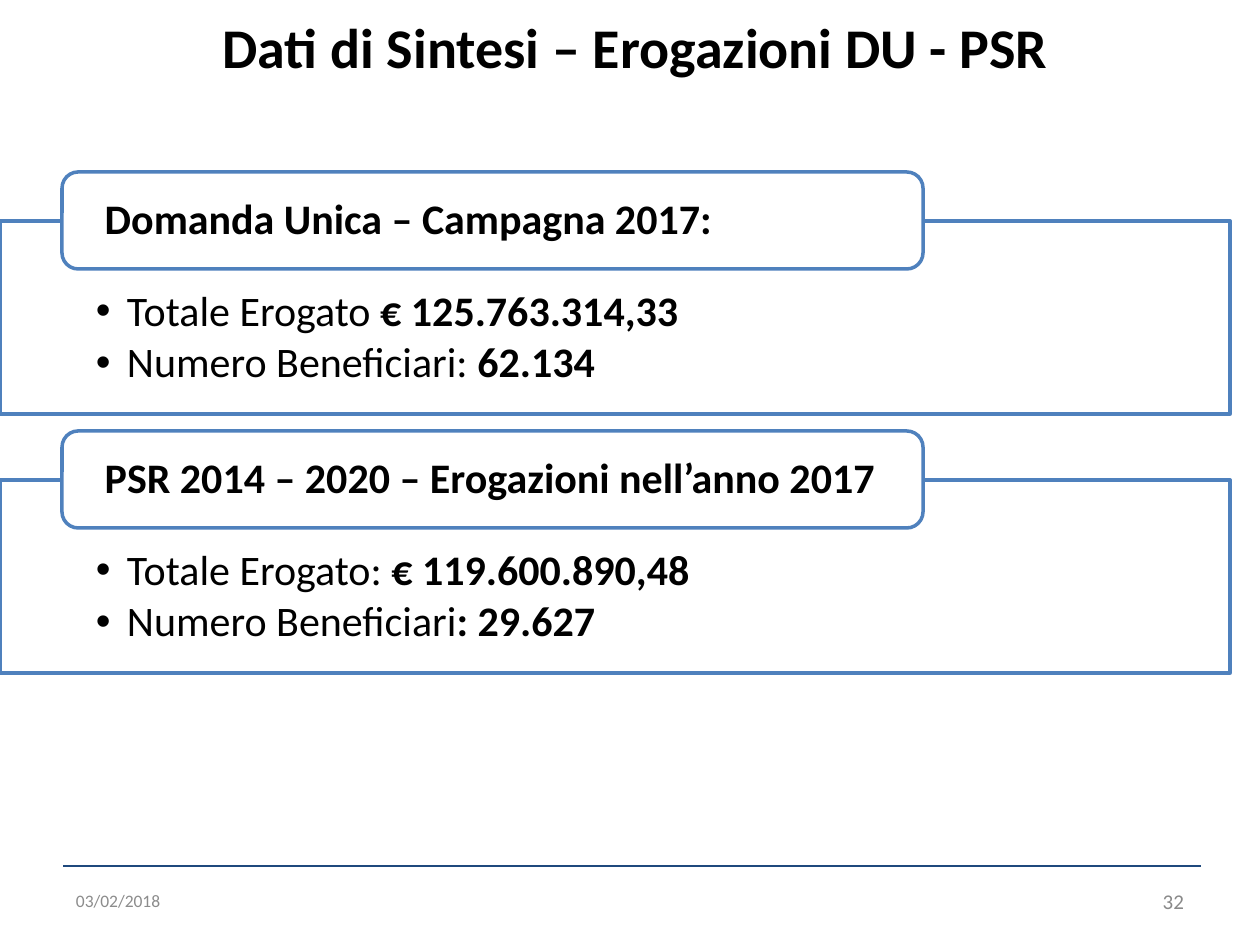
from lxml import etree
from pptx import Presentation
from pptx import util as u
from pptx.dml.color import RGBColor
from pptx.enum import shapes, text
from pptx.oxml.ns import qn

PX = 914400 / 126
FONT = "Calibri"
COLORS = {
    "paper": "FFFFFF", "ink": "000000", "frame": "4F81BD",
    "rule": "1F497D", "date": "8C8C8C", "number": "898989",
}
SECTIONS = [
    ("Domanda Unica – Campagna 2017:", [
        ("Totale Erogato ", "€ 125.763.314,33"),
        ("Numero Beneficiari: ", "62.134"),
    ]),
    ("PSR 2014 – 2020 – Erogazioni nell’anno 2017", [
        ("Totale Erogato: ", "€ 119.600.890,48"),
        ("Numero Beneficiari", ": 29.627"),
    ]),
]
SECTION_PITCH = 259


def px(length):
    return u.Emu(round(length * PX))


def color(name):
    return RGBColor.from_string(COLORS[name])


def set_frame(frame, margins, anchor):
    """Format a text frame; margins are left, top, right, bottom in px."""
    left, top, right, bottom = map(px, margins)
    values = {
        "word_wrap": True, "auto_size": text.MSO_AUTO_SIZE.NONE,
        "vertical_anchor": anchor, "margin_left": left, "margin_top": top,
        "margin_right": right, "margin_bottom": bottom,
    }
    for name, value in values.items():
        setattr(frame, name, value)


def add_span(para, words, size, ink="ink", bold=False):
    span = para.add_run()
    span.text = words
    for name, value in {"name": FONT, "size": u.Pt(size), "bold": bold}.items():
        setattr(span.font, name, value)
    span.font.color.rgb = color(ink)


def add_bullet(para, indent):
    props = para._p.get_or_add_pPr()
    props.set("marL", str(px(indent)))
    props.set("indent", str(-px(indent)))
    etree.SubElement(props, qn("a:buFont"), typeface="Arial")
    etree.SubElement(props, qn("a:buChar"), char="•")


def add_panel(page, kind, box, margins, anchor):
    """Add an outlined white shape and return its text frame."""
    panel = page.shapes.add_shape(kind, *map(px, box))
    panel.shadow.inherit = False
    panel.fill.solid()
    panel.fill.fore_color.rgb = color("paper")
    panel.line.color.rgb = color("frame")
    panel.line.width = u.Pt(2)
    set_frame(panel.text_frame, margins, anchor)
    return panel.text_frame


def add_section(page, box, heading, facts):
    left, top, width, height = box
    label_height = 97
    body_top = top + label_height // 2 + 1
    body = add_panel(page, shapes.MSO_SHAPE.RECTANGLE,
                     (left, body_top, width, top + height - body_top),
                     (96, 69, 96, 24), text.MSO_ANCHOR.TOP)
    for index, (caption, amount) in enumerate(facts):
        para = body.add_paragraph() if index else body.paragraphs[0]
        para.alignment = text.PP_ALIGN.LEFT
        para.line_spacing = 0.9
        para.space_after = u.Pt(3.6)
        add_bullet(para, 31)
        add_span(para, caption, 24)
        add_span(para, amount, 24, bold=True)

    label = add_panel(page, shapes.MSO_SHAPE.ROUNDED_RECTANGLE,
                      (left + 62, top, 861, label_height),
                      (38, 5, 38, 5), text.MSO_ANCHOR.MIDDLE)
    para = label.paragraphs[0]
    para.alignment = text.PP_ALIGN.LEFT
    para.line_spacing = 0.9
    add_span(para, heading, 24, bold=True)


def add_title(page, box, words):
    title = page.shapes.title
    title.left, title.top, title.width, title.height = map(px, box)
    set_frame(title.text_frame, (13, 6, 13, 6), text.MSO_ANCHOR.TOP)
    para = title.text_frame.paragraphs[0]
    para.alignment = text.PP_ALIGN.CENTER
    add_span(para, words, 32, bold=True)


def add_footer(page, box, date, number):
    left, top, width, height = box
    rule = page.shapes.add_connector(
        shapes.MSO_CONNECTOR.STRAIGHT,
        px(left), px(top), px(left + width), px(top))
    rule.line.color.rgb = color("rule")
    rule.line.width = u.Pt(1.5)
    etree.SubElement(rule._element.spPr, qn("a:effectLst"))

    note_width, note_height = 294, 50
    note_top = top + height - note_height
    notes = [
        (left, date, 10, "date", text.PP_ALIGN.LEFT),
        (left + width - 4 - note_width, number, 12, "number", text.PP_ALIGN.RIGHT),
    ]
    for note_left, words, size, ink, alignment in notes:
        note = page.shapes.add_textbox(
            *map(px, (note_left, note_top, note_width, note_height)))
        set_frame(note.text_frame, (13, 6, 13, 6), text.MSO_ANCHOR.MIDDLE)
        para = note.text_frame.paragraphs[0]
        para.alignment = alignment
        add_span(para, words, size, ink)


def main():
    deck = Presentation()
    deck.slide_width, deck.slide_height = px(1260), px(945)
    page = deck.slides.add_slide(deck.slide_layouts[5])
    add_title(page, (25, 6, 1221, 89), "Dati di Sintesi – Erogazioni DU - PSR")
    for index, (heading, facts) in enumerate(SECTIONS):
        add_section(page, (0, 172 + index * SECTION_PITCH, 1230, 242),
                    heading, facts)
    add_footer(page, (63, 866, 1138, 60), "03/02/2018", "32")
    deck.save("out.pptx")


if __name__ == "__main__":
    main()
